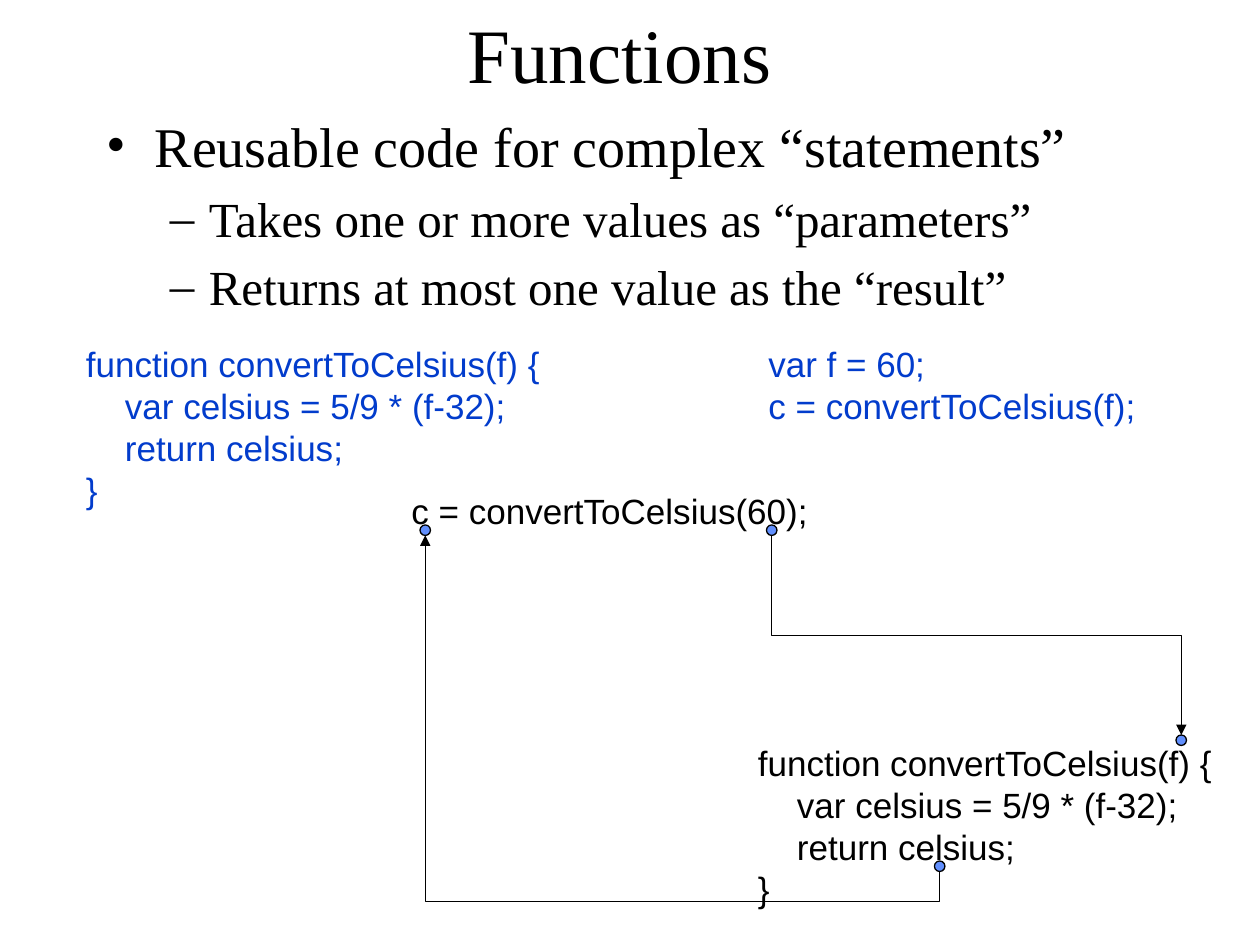
from dataclasses import dataclass
from lxml.etree import SubElement
from pptx import Presentation
from pptx.dml.color import RGBColor
from pptx.enum.shapes import MSO_CONNECTOR, MSO_SHAPE
from pptx.enum.text import MSO_ANCHOR, PP_ALIGN
from pptx.oxml.ns import qn
from pptx.util import Inches, Pt

UNIT = Inches(1) / 12  # one grid step, for both columns and rows
BLACK, BLUE, DOT = "000000", "023CCC", "618FFD"
SERIF, SANS = "Times New Roman", "Arial"
TAB = 0.31  # inches of code indent


@dataclass
class Line:
    text: str
    size: int = 20
    left: float = 0
    hang: float = 0
    mark: str = ""


@dataclass
class Block:
    col: float
    row: float
    wide: float
    high: float
    lines: list[Line]
    color: str = BLACK
    font: str = SANS
    wrap: bool = False


@dataclass
class Link:
    start: tuple[float, float]
    end: tuple[float, float]
    bend: float


def grid(*steps: float) -> list[int]:
    return [round(step * UNIT) for step in steps]


def rgb(code: str) -> RGBColor:
    return RGBColor.from_string(code)


def style(para, line: Line) -> None:
    """Set indent, spacing and bullet of one paragraph."""
    props = para._p.get_or_add_pPr()
    props.set("marL", str(Inches(line.left)))
    props.set("indent", str(Inches(-line.hang)))
    if line.mark:
        gap = SubElement(props, qn("a:spcBef"))
        SubElement(gap, qn("a:spcPct")).set("val", "20000")
        SubElement(props, qn("a:buFont")).set("typeface", SERIF)
        SubElement(props, qn("a:buChar")).set("char", line.mark)


def write(shapes, block: Block):
    box = shapes.add_textbox(*grid(block.col, block.row, block.wide, block.high))
    frame = box.text_frame
    frame.word_wrap = block.wrap
    for i, line in enumerate(block.lines):
        para = frame.add_paragraph() if i else frame.paragraphs[0]
        style(para, line)
        run = para.add_run()
        run.text = line.text
        look = {"name": block.font, "size": Pt(line.size)}
        for key, value in look.items():
            setattr(run.font, key, value)
        run.font.color.rgb = rgb(block.color)
    return box


def dot(shapes, col: float, row: float) -> None:
    disc = shapes.add_shape(MSO_SHAPE.OVAL, *grid(col, row, 1, 1))
    disc.shadow.inherit = False
    disc.fill.solid()
    disc.fill.fore_color.rgb = rgb(DOT)
    disc.line.color.rgb = rgb(BLACK)
    disc.line.width = Pt(0.75)


def join(shapes, link: Link) -> None:
    """Draw an elbow arrow that leaves and arrives vertically."""
    (x1, y1), (x2, y2) = link.start, link.end
    midx, midy = (x1 + x2) / 2, (y1 + y2) / 2
    dx, dy = (x2 - x1) / 2, (y2 - y1) / 2
    # Ends before the quarter turn to the left
    ends = grid(midx + dy, midy - dx, midx - dy, midy + dx)
    wire = shapes.add_connector(MSO_CONNECTOR.ELBOW, *ends)
    wire.line.color.rgb = rgb(BLACK)
    wire.line.width = Pt(0.75)
    props = wire._element.spPr
    props.find(qn("a:xfrm")).set("rot", str(270 * 60000))
    guide = SubElement(props.find(qn("a:prstGeom")).find(qn("a:avLst")), qn("a:gd"))
    guide.set("name", "adj1")
    guide.set("fmla", f"val {round(link.bend * 100000)}")
    SubElement(props.find(qn("a:ln")), qn("a:tailEnd")).set("type", "triangle")
    SubElement(props, qn("a:effectLst"))


CODE = [
    Line("function convertToCelsius(f) {"),
    Line("var celsius = 5/9 * (f-32);", left=TAB),
    Line("return celsius;", left=TAB),
    Line("}"),
]
POINTS = [
    Line("Reusable code for complex “statements”", 32, 0.38, 0.38, "•"),
    Line("Takes one or more values as “parameters”", 28, 0.81, 0.31, "–"),
    Line("Returns at most one value as the “result”", 28, 0.81, 0.31, "–"),
]
CALL = [Line("var f = 60;"), Line("c = convertToCelsius(f);")]
TITLE = Block(6, 0, 106, 10, [Line("Functions", 44)], font=SERIF, wrap=True)
BLOCKS = [
    Block(9, 10, 102, 54, POINTS, font=SERIF, wrap=True),
    Block(7, 32, 46, 17.2, CODE, BLUE),
    Block(72, 32, 37.7, 9.2, CALL, BLUE),
    Block(38, 46, 40.4, 5.2, [Line("c = convertToCelsius(60);")]),
]
LINKS = [
    Link((73.5, 51), (112.5, 70), 0.5),     # argument passed in
    Link((89.5, 83), (40.5, 51), -0.09),    # result handed back
]


def main() -> None:
    deck = Presentation()
    deck.slide_width, deck.slide_height = Inches(10), Inches(7.5)
    shapes = deck.slides.add_slide(deck.slide_layouts[6]).shapes

    # Heading, bullet points and code
    head = write(shapes, TITLE)
    head.text_frame.vertical_anchor = MSO_ANCHOR.MIDDLE
    head.text_frame.paragraphs[0].alignment = PP_ALIGN.CENTER
    for block in BLOCKS:
        write(shapes, block)

    # Called function with its parameter and result dots
    group = shapes.add_group_shape().shapes
    write(group, Block(71, 70, 46, 17.2, CODE))
    for col, row in [(112, 70), (89, 82)]:
        dot(group, col, row)

    # Dots on the call, and the flow between both sides
    for col in (40, 73):
        dot(shapes, col, 50)
    for link in LINKS:
        join(shapes, link)
    deck.save("out.pptx")


if __name__ == "__main__":
    main()
